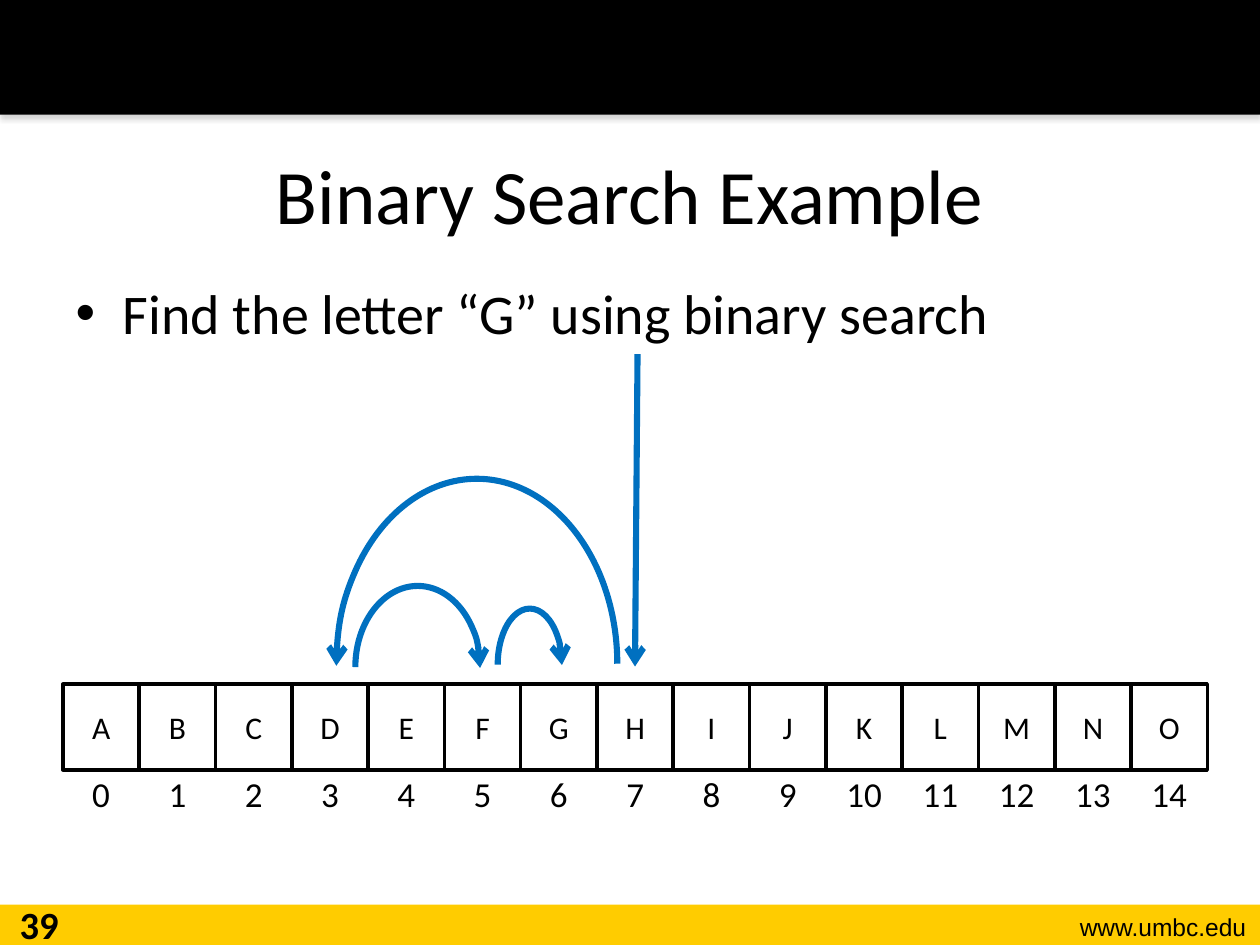
from dataclasses import dataclass

from lxml.etree import SubElement
from pptx import Presentation
from pptx.dml.color import RGBColor
from pptx.enum.shapes import MSO_CONNECTOR, MSO_SHAPE
from pptx.enum.text import MSO_ANCHOR, PP_ALIGN
from pptx.oxml.ns import qn
from pptx.util import Inches, Pt

BLACK = RGBColor(0x00, 0x00, 0x00)
WHITE = RGBColor(0xFF, 0xFF, 0xFF)
GOLD = RGBColor(0xFF, 0xCC, 0x00)
BLUE = RGBColor(0x00, 0x70, 0xC0)

LETTERS = "ABCDEFGHIJKLMNO"
ROW_LEFT = 0.5
CELL_PITCH = 0.6055
CELL_HEIGHT = 0.68


@dataclass(frozen=True)
class Box:
    left: float
    top: float
    width: float
    height: float

    def lengths(self):
        return tuple(Inches(v) for v in (self.left, self.top, self.width, self.height))


@dataclass(frozen=True)
class CellRow:
    labels: list[str]
    top: float
    size: int
    border: RGBColor


@dataclass(frozen=True)
class Hop:
    box: Box
    leftward: bool = False


def write(frame, text: str, size: int, align: PP_ALIGN, font: str = "Calibri",
          bold: bool = False) -> None:
    paragraph = frame.paragraphs[0]
    paragraph.alignment = align
    run = paragraph.add_run()
    run.text = text
    run.font.name = font
    run.font.size = Pt(size)
    run.font.bold = bold
    run.font.color.rgb = BLACK


def fill_placeholder(placeholder, box: Box, text: str, size: int, align: PP_ALIGN) -> None:
    placeholder.left, placeholder.top, placeholder.width, placeholder.height = box.lengths()
    write(placeholder.text_frame, text, size, align)


def add_band(slide, box: Box, color: RGBColor):
    band = slide.shapes.add_shape(MSO_SHAPE.RECTANGLE, *box.lengths())
    band.shadow.inherit = False
    band.fill.solid()
    band.fill.fore_color.rgb = color
    band.line.fill.background()
    return band


def add_soft_shadow(shape) -> None:
    effects = shape._element.spPr.find(qn("a:effectLst"))
    shadow = SubElement(effects, qn("a:outerShdw"), blurRad=str(Pt(3.1)),
                        dist=str(Pt(1.8)), dir="5400000", rotWithShape="0")
    color = SubElement(shadow, qn("a:srgbClr"), val="808080")
    SubElement(color, qn("a:alpha"), val="35000")


def add_label(slide, box: Box, text: str, size: int, align: PP_ALIGN, **style) -> None:
    label = slide.shapes.add_textbox(*box.lengths())
    label.text_frame.word_wrap = True
    write(label.text_frame, text, size, align, **style)


def add_cell_row(slide, row: CellRow) -> None:
    group = slide.shapes.add_group_shape()
    for index, text in enumerate(row.labels):
        box = Box(ROW_LEFT + index * CELL_PITCH, row.top, CELL_PITCH, CELL_HEIGHT)
        cell = group.shapes.add_shape(MSO_SHAPE.RECTANGLE, *box.lengths())
        cell.shadow.inherit = False
        cell.fill.solid()
        cell.fill.fore_color.rgb = WHITE
        cell.line.color.rgb = row.border
        cell.line.width = Pt(2)
        cell.text_frame.vertical_anchor = MSO_ANCHOR.MIDDLE
        write(cell.text_frame, text, row.size, PP_ALIGN.CENTER)


def style_arrow(shape) -> None:
    shape.line.color.rgb = BLUE
    shape.line.width = Pt(3.5)
    SubElement(shape.line._get_or_add_ln(), qn("a:tailEnd"), type="arrow")


def add_hop(slide, hop: Hop) -> None:
    """Draw the upper half of an ellipse as an arrow from one probe to the next."""
    arc = slide.shapes.add_shape(MSO_SHAPE.ARC, *hop.box.lengths())
    arc.adjustments[0] = 108.06
    arc.adjustments[1] = 0.44
    arc.shadow.inherit = False
    arc.fill.background()
    style_arrow(arc)
    if hop.leftward:
        arc._element.spPr.find(qn("a:xfrm")).set("flipH", "1")


def add_first_probe(slide) -> None:
    probe = slide.shapes.add_connector(
        MSO_CONNECTOR.STRAIGHT, Inches(5.06), Inches(2.81), Inches(5.04), Inches(5.29))
    style_arrow(probe)
    SubElement(probe._element.spPr, qn("a:effectLst"))


def main() -> None:
    deck = Presentation()
    deck.slide_width, deck.slide_height = Inches(10), Inches(7.5)
    slide = deck.slides.add_slide(deck.slide_layouts[1])

    add_band(slide, Box(0, 7.18, 10, 0.32), GOLD)
    add_soft_shadow(add_band(slide, Box(0, 0, 10, 0.91), BLACK))
    add_label(slide, Box(8, 7.19, 1.99, 0.34), "www.umbc.edu", 14, PP_ALIGN.RIGHT,
              font="Arial")

    fill_placeholder(slide.shapes.title, Box(0.5, 0.91, 9, 1.25),
                     "Binary Search Example", 44, PP_ALIGN.CENTER)
    fill_placeholder(slide.placeholders[1], Box(0.5, 2.16, 9, 4.94),
                     "Find the letter “G” using binary search", 32, PP_ALIGN.LEFT)
    add_label(slide, Box(0, 7.1, 0.62, 0.4), "39", 22, PP_ALIGN.CENTER, bold=True)

    indices = [str(index) for index in range(len(LETTERS))]
    add_cell_row(slide, CellRow(indices, 5.96, 20, WHITE))
    add_cell_row(slide, CellRow(list(LETTERS), 5.43, 18, BLACK))

    add_first_probe(slide)
    for hop in (
        Hop(Box(2.67, 3.8, 2.23, 2.94), leftward=True),
        Hop(Box(2.82, 4.65, 0.99, 1.29)),
        Hop(Box(3.95, 4.83, 0.51, 0.89)),
    ):
        add_hop(slide, hop)

    deck.save("out.pptx")


if __name__ == "__main__":
    main()
